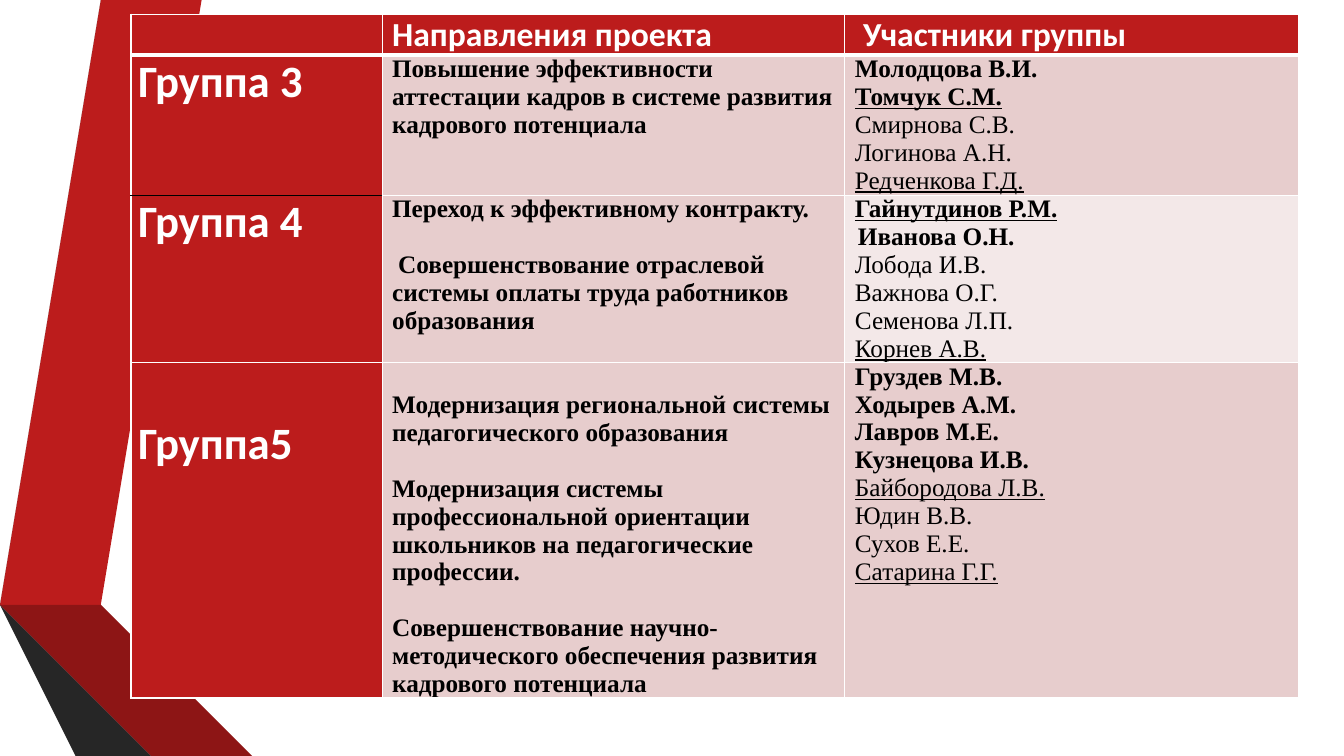
"""Build the slide listing project groups, their directions and members."""
from lxml import etree
from pptx import Presentation
from pptx import util as u
from pptx.dml.color import RGBColor
from pptx.oxml import ns

WHITE = RGBColor(0xFF, 0xFF, 0xFF)
BLACK = RGBColor(0x00, 0x00, 0x00)
RED = RGBColor(0xBC, 0x1C, 0x1C)
DARK_RED = RGBColor(0x8D, 0x15, 0x15)
DEEP_RED = RGBColor(0x5E, 0x0E, 0x0E)
GRAY = RGBColor(0x59, 0x59, 0x59)
DARK_GRAY = RGBColor(0x40, 0x40, 0x40)
DEEP_GRAY = RGBColor(0x26, 0x26, 0x26)
PINK = RGBColor(0xE7, 0xCD, 0xCD)
LIGHT_PINK = RGBColor(0xF3, 0xE8, 0xE8)

HEADER = {"name": "Calibri", "size": u.Pt(24), "bold": True}
GROUP = {**HEADER, "size": u.Pt(32)}
MEMBER = {"name": "Times New Roman", "size": u.Pt(18), "bold": False}
LEADER = {**MEMBER, "bold": True}
MEMBER_LINED = {**MEMBER, "underline": True}
LEADER_LINED = {**LEADER, "underline": True}
DIRECTION_GAP = u.Pt(20)

RIBBONS = [
    (RED, [(0.5, 5.78), (0.77, 5.83), (1.73, 0), (1.45, 0)]),
    (GRAY, [(1.39, 0), (1.11, 0), (0.16, 5.73), (0.44, 5.77)]),
    (DEEP_GRAY, [(0.16, 5.73), (1.45, 7.5), (1.51, 7.5)]),
    (DEEP_RED, [(0.5, 5.79), (2.08, 7.5), (2.14, 7.5)]),
    (DARK_RED, [(0.5, 5.79), (2.14, 7.5), (2.83, 7.5), (0.77, 5.83), (0.5, 5.78)]),
    (DARK_GRAY, [(2.02, 7.5), (0.48, 5.83), (0.43, 5.78), (0.44, 5.77),
                 (0.16, 5.73), (1.51, 7.5)]),
]

COLUMN_WIDTHS = [2.49, 4.59, 4.5]
ROW_HEIGHTS = [0.4, 1.39, 1.66, 3.32]
GROUPS = [
    {
        "title": "Группа 3",
        "directions": ["Повышение эффективности аттестации кадров в системе "
                       "развития кадрового потенциала"],
        "members": [
            ("Молодцова В.И.", LEADER), ("Томчук С.М.", LEADER_LINED),
            ("Смирнова С.В.", MEMBER), ("Логинова А.Н.", MEMBER),
            ("Редченкова Г.Д.", MEMBER_LINED),
        ],
        "fill": PINK,
    },
    {
        "title": "Группа 4",
        "directions": ["Переход к эффективному контракту.",
                       "Совершенствование отраслевой системы оплаты труда "
                       "работников образования"],
        "members": [
            ("Гайнутдинов Р.М.", LEADER_LINED), ("Иванова О.Н.", LEADER),
            ("Лобода И.В.", MEMBER), ("Важнова О.Г.", MEMBER),
            ("Семенова Л.П.", MEMBER), ("Корнев А.В.", MEMBER_LINED),
        ],
        "fill": LIGHT_PINK,
    },
    {
        "title": "Группа5",
        "directions": ["Модернизация региональной системы педагогического образования",
                       "Модернизация системы профессиональной ориентации школьников "
                       "на педагогические профессии.",
                       "Совершенствование научно-методического обеспечения развития "
                       "кадрового потенциала"],
        "members": [
            ("Груздев М.В.", LEADER), ("Ходырев А.М.", LEADER),
            ("Лавров М.Е.", LEADER), ("Кузнецова И.В.", LEADER),
            ("Байбородова Л.В.", MEMBER_LINED), ("Юдин В.В.", MEMBER),
            ("Сухов Е.Е.", MEMBER), ("Сатарина Г.Г.", MEMBER_LINED),
        ],
        "fill": PINK,
        "title_top": 0.54,
        "directions_top": 0.28,
    },
]


def add_ribbon(slide, color, points):
    """Draw one filled polygon of the side decoration."""
    builder = slide.shapes.build_freeform(*points[0], scale=u.Inches(1))
    builder.add_line_segments(points[1:], close=True)
    shape = builder.convert_to_shape()
    shape.shadow.inherit = False
    shape.fill.solid()
    shape.fill.fore_color.rgb = color
    shape.line.fill.background()


def set_border(cell, side, color, width):
    """Add a solid border to one side of a cell."""
    properties = cell._tc.get_or_add_tcPr()
    line = etree.SubElement(properties, ns.qn(f"a:ln{side}"), w=str(u.Pt(width)))
    fill = etree.SubElement(line, ns.qn("a:solidFill"))
    etree.SubElement(fill, ns.qn("a:srgbClr"), val=str(color))


def style_cell(cell, fill, left=0.1, right=0, top=0, borders=None):
    """Set the margins, borders and fill of a cell."""
    margins = {"margin_left": left, "margin_right": right,
               "margin_top": top, "margin_bottom": 0}
    for name, value in margins.items():
        setattr(cell, name, u.Inches(value))
    for side in "LRTB":
        set_border(cell, side, *(borders or {}).get(side, (WHITE, 1)))
    cell.fill.solid()
    cell.fill.fore_color.rgb = fill


def write_cell(cell, lines, color, gap=0):
    """Write formatted lines as paragraphs with a gap between them."""
    frame = cell.text_frame
    for index, (line, font_format) in enumerate(lines):
        paragraph = frame.add_paragraph() if index else frame.paragraphs[0]
        if index:
            paragraph.space_before = gap
        run = paragraph.add_run()
        run.text = line
        for name, value in font_format.items():
            setattr(run.font, name, value)
        run.font.color.rgb = color


def indent_paragraph(paragraph, first_line):
    """Shift the first line of a paragraph to the right."""
    properties = paragraph._p.get_or_add_pPr()
    properties.set("marL", "0")
    properties.set("indent", str(u.Inches(first_line)))


def fill_header(table):
    """Fill the heading row."""
    for column, title in enumerate(["", "Направления проекта", "Участники группы"]):
        cell = table.cell(0, column)
        style_cell(cell, RED, borders={"B": (WHITE, 3)})
        if title:
            write_cell(cell, [(title, HEADER)], WHITE)
    indent_paragraph(table.cell(0, 2).text_frame.paragraphs[0], 0.08)


def fill_group(table, row, group):
    """Fill the row of one group."""
    title, directions, members = (table.cell(row, column) for column in range(3))
    title_borders = {1: {"T": (WHITE, 3), "B": (BLACK, 1)}, 2: {"T": (BLACK, 1)}}
    body_borders = {"T": (WHITE, 3)} if row == 1 else None
    style_cell(title, RED, left=0.07, right=0.07, top=group.get("title_top", 0),
               borders=title_borders.get(row))
    style_cell(directions, PINK, top=group.get("directions_top", 0), borders=body_borders)
    style_cell(members, group["fill"], borders=body_borders)
    write_cell(title, [(group["title"], GROUP)], WHITE)
    write_cell(directions, [(line, LEADER) for line in group["directions"]],
               BLACK, DIRECTION_GAP)
    write_cell(members, group["members"], BLACK)


def add_group_table(slide):
    """Add the table of groups."""
    frame = slide.shapes.add_table(
        len(ROW_HEIGHTS), len(COLUMN_WIDTHS), u.Inches(1.3), u.Inches(0.14),
        u.Inches(sum(COLUMN_WIDTHS)), u.Inches(sum(ROW_HEIGHTS)))
    table = frame.table
    for column, width in zip(table.columns, COLUMN_WIDTHS):
        column.width = u.Inches(width)
    for row, height in zip(table.rows, ROW_HEIGHTS):
        row.height = u.Inches(height)
    fill_header(table)
    for row, group in enumerate(GROUPS, 1):
        fill_group(table, row, group)
    indent_paragraph(table.cell(2, 1).text_frame.paragraphs[1], 0.06)
    indent_paragraph(table.cell(2, 2).text_frame.paragraphs[1], 0.03)


def main():
    """Build and save the presentation."""
    presentation = Presentation()
    presentation.slide_width = u.Inches(13.33)
    presentation.slide_height = u.Inches(7.5)
    slide = presentation.slides.add_slide(presentation.slide_layouts[6])
    for color, points in RIBBONS:
        add_ribbon(slide, color, points)
    add_group_table(slide)
    presentation.save("out.pptx")


if __name__ == "__main__":
    main()
